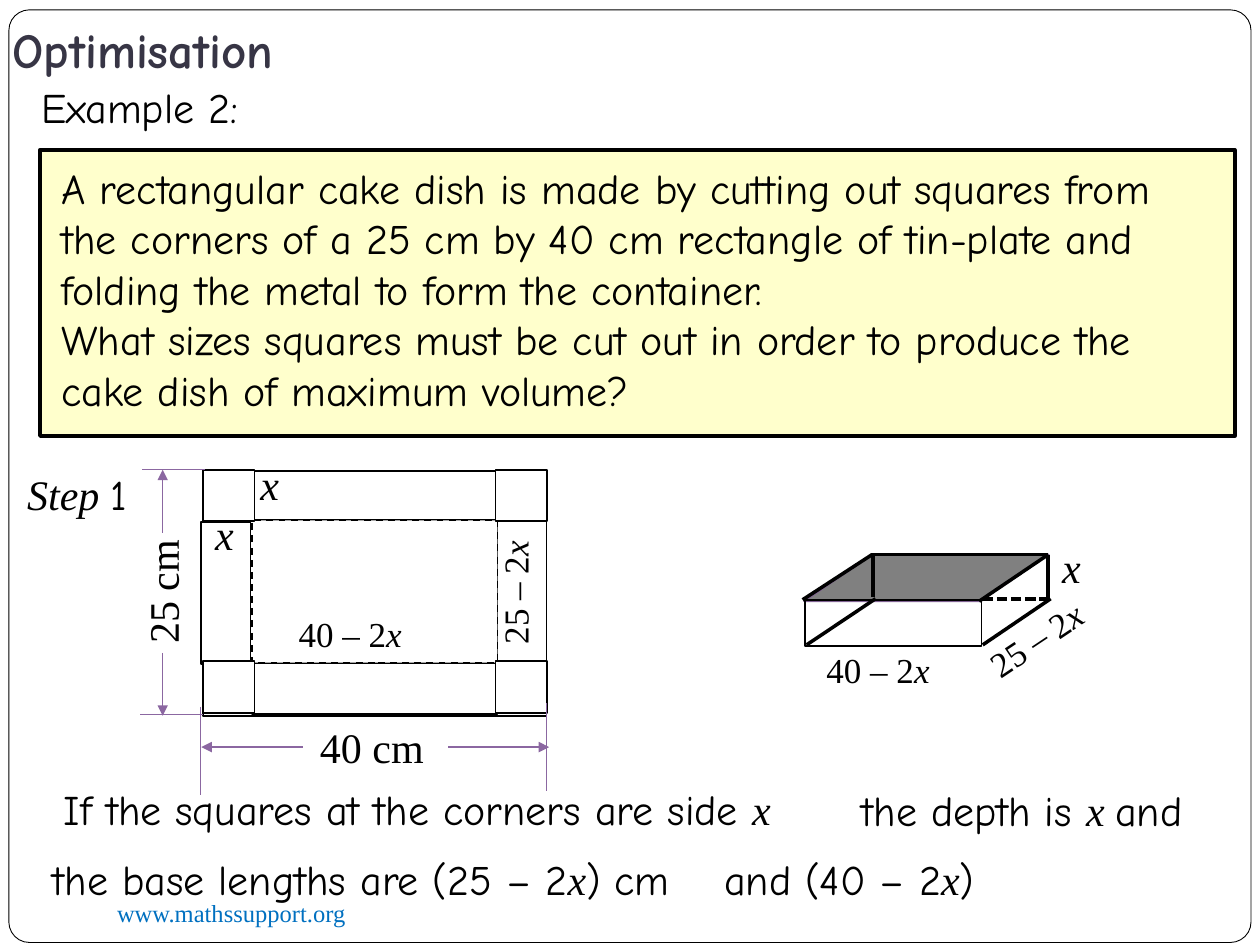
from lxml import etree
from pptx import Presentation
from pptx.dml.color import RGBColor
from pptx.enum.dml import MSO_LINE
from pptx.enum.shapes import MSO_CONNECTOR, MSO_SHAPE
from pptx.enum.text import MSO_ANCHOR, MSO_AUTO_SIZE, PP_ALIGN
from pptx.oxml.ns import qn
from pptx.util import Cm, Pt

RECT, ROUND = MSO_SHAPE.RECTANGLE, MSO_SHAPE.ROUNDED_RECTANGLE
PARALLELOGRAM, STRAIGHT = MSO_SHAPE.PARALLELOGRAM, MSO_CONNECTOR.STRAIGHT
DASH, SYS_DASH = MSO_LINE.DASH, MSO_LINE.SQUARE_DOT
LEFT, TOP, BOTTOM = PP_ALIGN.LEFT, MSO_ANCHOR.TOP, MSO_ANCHOR.BOTTOM
GROW, FIXED = MSO_AUTO_SIZE.SHAPE_TO_FIT_TEXT, MSO_AUTO_SIZE.NONE

BLACK = RGBColor(0x00, 0x00, 0x00)
WHITE = RGBColor(0xFF, 0xFF, 0xFF)
CREAM = RGBColor(0xFF, 0xFF, 0xCC)
GREY = RGBColor(0x80, 0x80, 0x80)
NAVY = RGBColor(0x37, 0x35, 0x45)
BLUE = RGBColor(0x00, 0x70, 0xC0)
PURPLE = RGBColor(0x8B, 0x67, 0xA1)
PLUM = RGBColor(0x80, 0x62, 0x92)

HAND = {"name": "Comic Neue", "size": Pt(24)}
SERIF = {"name": "Times New Roman", "size": Pt(24)}
ITALIC = SERIF | {"italic": True}
SMALL = SERIF | {"size": Pt(20)}
SMALL_ITALIC = ITALIC | {"size": Pt(20)}
HEADING = {"name": "Comic Neue", "size": Pt(28), "bold": True}
FOOTER = {"name": "Times New Roman", "size": Pt(14)}


class Board:
    """Hold the slide and draw styled elements on it."""

    def __init__(self, prs):
        self.s = prs.slides.add_slide(prs.slide_layouts[5])

    def fill_text(self, sp, paragraphs, color=BLACK, **frame):
        tf = sp.text_frame
        for key, value in frame.items():
            setattr(tf, key, value)
        for i, runs in enumerate(paragraphs):
            p = tf.add_paragraph() if i else tf.paragraphs[0]
            p.alignment = LEFT
            for text, fmt in runs:
                r = p.add_run()
                r.text = text
                for key, value in fmt.items():
                    setattr(r.font, key, value)
                r.font.color.rgb = color

    def title(self, text, box):
        sp = self.s.shapes.title
        sp.left, sp.top, sp.width, sp.height = map(Cm, box)
        self.fill_text(sp, [[(text, HEADING)]], NAVY, vertical_anchor=BOTTOM,
                       margin_bottom=Cm(0.25), auto_size=FIXED)

    def text(self, box, *runs, wrap=False, rotation=0, color=BLACK):
        sp = self.s.shapes.add_textbox(*map(Cm, box))
        sp.rotation = rotation
        self.fill_text(sp, [runs], color, word_wrap=wrap, auto_size=GROW)

    def shape(self, box, kind=RECT, fill=None, line=BLACK, width=1, dash=None, adj=None):
        sp = self.s.shapes.add_shape(kind, *map(Cm, box))
        sp.shadow.inherit = False
        if fill is None:
            sp.fill.background()
        else:
            sp.fill.solid()
            sp.fill.fore_color.rgb = fill
        if line is None:
            sp.line.fill.background()
        else:
            sp.line.color.rgb = line
            sp.line.width = Pt(width)
            sp.line.dash_style = dash
        if adj is not None:
            sp.adjustments[0] = adj
        return sp

    def line(self, ends, color=BLACK, width=2, dash=None, arrow=False):
        sp = self.s.shapes.add_connector(STRAIGHT, *map(Cm, ends))
        sp.line.color.rgb = color
        sp.line.width = Pt(width)
        sp.line.dash_style = dash
        sp_pr = sp._element.spPr
        if arrow:
            etree.SubElement(sp_pr.find(qn("a:ln")), qn("a:tailEnd"), type="triangle")
        etree.SubElement(sp_pr, qn("a:effectLst"))


def add_question(board):
    board.shape((0.81, 3.02, 24.08, 5.77), fill=CREAM, width=2.25)
    sp = board.shape((0.99, 3.15, 23.7, 5.38), fill=CREAM, line=None)
    board.fill_text(sp, [
        [("A rectangular cake dish is made by cutting out squares from the corners of "
          "a 25 cm by 40 cm rectangle of tin-plate and folding the metal to form the "
          "container.", HAND)],
        [("What sizes squares must be cut out in order to produce the cake dish of "
          "maximum volume?", HAND)],
    ], vertical_anchor=TOP, word_wrap=True, auto_size=GROW)


def add_net(board):
    board.shape((4.09, 9.5, 6.93, 4.93))
    for box in ((4.06, 10.52, 0.99, 2.87), (10.03, 10.44, 0.99, 2.92),
                (5.11, 9.5, 4.95, 0.99), (5.08, 13.36, 4.95, 1.04)):
        board.shape(box, fill=WHITE)
    board.shape((5.08, 10.49, 4.95, 2.87), fill=WHITE, dash=DASH)
    for x in (4.09, 9.99):
        for y in (9.47, 13.33):
            board.shape((x, y, 1.04, 1.04), fill=WHITE)

    for ends in ((4.04, 14.25, 4.04, 16.03), (11.02, 14.17, 11.02, 15.95),
                 (4.09, 14.4, 2.82, 14.4), (2.87, 9.47, 4.14, 9.47)):
        board.line(ends, PURPLE, 0.75)
    for ends in ((6.1, 15.06, 4.06, 15.06), (9.04, 15.06, 11.07, 15.06),
                 (3.28, 13.16, 3.28, 14.43), (3.28, 10.74, 3.28, 9.47)):
        board.line(ends, PURPLE, 0.75, arrow=True)

    board.text((6.2, 14.43, 2.84, 1.27), ("40 cm", SERIF))
    board.text((1.96, 11.28, 2.62, 1.27), ("25 cm", SERIF), rotation=270)


def add_dish(board):
    board.shape((16.21, 11.18, 4.93, 0.94), PARALLELOGRAM, GREY, PLUM, adj=1.466)
    board.shape((16.23, 12.09, 3.56, 0.94))
    for ends in ((16.26, 13, 17.65, 12.07), (19.81, 13, 21.18, 12.07),
                 (19.74, 12.12, 21.13, 11.18), (16.18, 12.09, 17.58, 11.18),
                 (17.6, 11.18, 21.13, 11.18), (21.13, 11.18, 21.13, 12.09),
                 (17.6, 11.15, 17.6, 12.04)):
        board.line(ends)
    board.line((19.81, 12.07, 21.21, 12.07), dash=SYS_DASH)


def add_labels(board):
    for x, y in ((5, 9.12), (4.09, 10.13), (21.16, 10.8)):
        board.text((x, y, 0.89, 1.27), ("x", ITALIC))
    for x, y, size, rotation in ((5.77, 12.22, "40", 0), (8.99, 11.28, "25", 270),
                                 (16.41, 12.95, "40", 0), (19.58, 12.27, "25", 326.2)):
        board.text((x, y, 2.79, 1.12), (f"{size} – 2", SMALL), ("x", SMALL_ITALIC),
                   rotation=rotation)


def add_reasoning(board):
    board.text((0.3, 9.32, 2.59, 1.27), ("Step ", ITALIC), ("1", HAND))
    board.text((1.04, 15.67, 18.31, 1.27),
               ("If the squares at the corners are side ", HAND), ("x", ITALIC), wrap=True)
    board.text((17.12, 15.7, 8.18, 1.27),
               ("the depth is ", HAND), ("x ", ITALIC), ("and", HAND), wrap=True)
    board.text((0.81, 17.09, 13.94, 1.27),
               ("the base lengths are (25 – 2", HAND), ("x", ITALIC), (") cm", HAND), wrap=True)
    board.text((14.35, 17.09, 5.59, 1.27),
               ("and (40 – 2", HAND), ("x", ITALIC), (")", HAND), wrap=True)


def main():
    prs = Presentation()
    prs.slide_width, prs.slide_height = Cm(25.4), Cm(19.05)
    board = Board(prs)
    board.shape((0.18, 0.2, 25.04, 18.8), ROUND, width=0.5, adj=0.022)
    board.text((2.11, 17.98, 8.26, 0.86), ("www.mathssupport.org", FOOTER),
               wrap=True, color=BLUE)
    board.title("Optimisation", (0, 0.13, 21.59, 1.7))
    board.text((0.58, 1.52, 14.78, 1.27), ("Example 2:", HAND), wrap=True)
    add_question(board)
    add_net(board)
    add_dish(board)
    add_labels(board)
    add_reasoning(board)
    prs.save("out.pptx")


if __name__ == "__main__":
    main()
